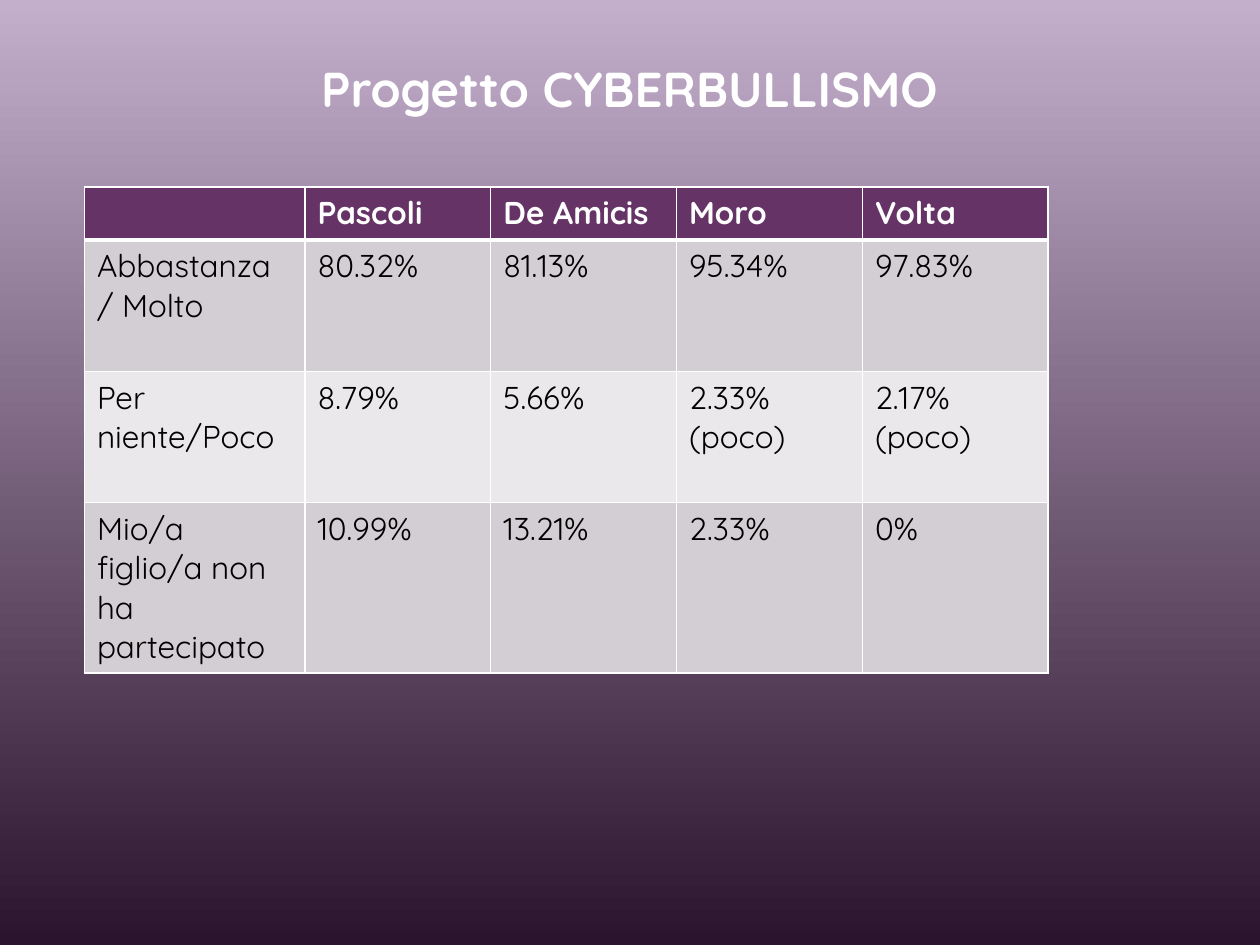
from dataclasses import dataclass

from lxml import etree
from pptx import Presentation
from pptx.dml.color import RGBColor
from pptx.enum import text
from pptx.oxml import ns
from pptx import util as u

WIDE, HIGH = u.Inches(10), u.Inches(7.5)
FONT = "Quicksand"
WHITE = RGBColor(0xFF, 0xFF, 0xFF)
BLACK = RGBColor(0, 0, 0)
PLUM = RGBColor(0x66, 0x33, 0x66)
MAUVE = RGBColor(0xD3, 0xCE, 0xD3)
PALE = RGBColor(0xEA, 0xE8, 0xEA)
FADE = (RGBColor(0xC3, 0xAF, 0xCC), RGBColor(0x2B, 0x14, 0x2D))


@dataclass
class Row:
    high: float  # share of the slide's height
    fill: RGBColor
    ink: RGBColor
    bold: bool
    cells: tuple
    top: int = 1  # border widths in points
    base: int = 1


ROWS = (
    Row(0.056, PLUM, WHITE, True,
        ("", "Pascoli", "De Amicis", "Moro", "Volta"), base=3),
    Row(0.139, MAUVE, BLACK, False,
        ("Abbastanza / Molto", "80.32%", "81.13%", "95.34%", "97.83%"), top=3),
    Row(0.139, PALE, BLACK, False,
        ("Per niente/Poco", "8.79%", "5.66%", "2.33%\n(poco)", "2.17%\n(poco)")),
    Row(0.18, MAUVE, BLACK, False,
        ("Mio/a figlio/a non ha partecipato", "10.99%", "13.21%", "2.33%", "0%")),
)
COLS = (0.175,) + (0.1475,) * 4  # shares of the slide's width


def style(para, size: int, ink: RGBColor, bold: bool) -> None:
    look = {"name": FONT, "size": u.Pt(size), "bold": bold}
    for key, val in look.items():
        setattr(para.font, key, val)
    para.font.color.rgb = ink


def edge(cell, side: str, width: int) -> None:
    line = etree.SubElement(cell._tc.get_or_add_tcPr(), ns.qn(f"a:ln{side}"),
                            w=str(u.Pt(width)))
    fill = etree.SubElement(line, ns.qn("a:solidFill"))
    etree.SubElement(fill, ns.qn("a:srgbClr"), val=str(WHITE))


def draw(cell, words: str, row: Row) -> None:
    # Borders come before the fill in the cell's properties
    for side, width in {"L": 1, "R": 1, "T": row.top, "B": row.base}.items():
        edge(cell, side, width)
    cell.fill.solid()
    cell.fill.fore_color.rgb = row.fill
    cell.text = words
    for para in cell.text_frame.paragraphs:
        style(para, 18, row.ink, row.bold)


def main() -> None:
    deck = Presentation()
    deck.slide_width, deck.slide_height = WIDE, HIGH
    slide = deck.slides.add_slide(deck.slide_layouts[5])

    # Background fading from top to bottom
    back = slide.background.fill
    back.gradient()
    back.gradient_angle = 270
    for stop, tint in zip(back.gradient_stops, FADE):
        stop.color.rgb = tint

    # Title
    title = slide.shapes.title
    place = {"left": 0.085 * WIDE, "top": 0.013 * HIGH,
             "width": 0.829 * WIDE, "height": 0.167 * HIGH}
    for key, val in place.items():
        setattr(title, key, int(val))
    title.text = "Progetto CYBERBULLISMO"
    title.text_frame.vertical_anchor = text.MSO_ANCHOR.MIDDLE
    para = title.text_frame.paragraphs[0]
    para.alignment = text.PP_ALIGN.CENTER
    para.line_spacing = 0.95
    style(para, 28, WHITE, True)

    # Table of answers by school
    grid = slide.shapes.add_table(
        len(ROWS), len(COLS), int(0.067 * WIDE), int(0.198 * HIGH),
        int(sum(COLS) * WIDE), int(sum(r.high for r in ROWS) * HIGH)).table
    for col, share in zip(grid.columns, COLS):
        col.width = int(share * WIDE)
    for i, row in enumerate(ROWS):
        grid.rows[i].height = int(row.high * HIGH)
        for j, words in enumerate(row.cells):
            draw(grid.cell(i, j), words, row)

    deck.save("out.pptx")


if __name__ == "__main__":
    main()
